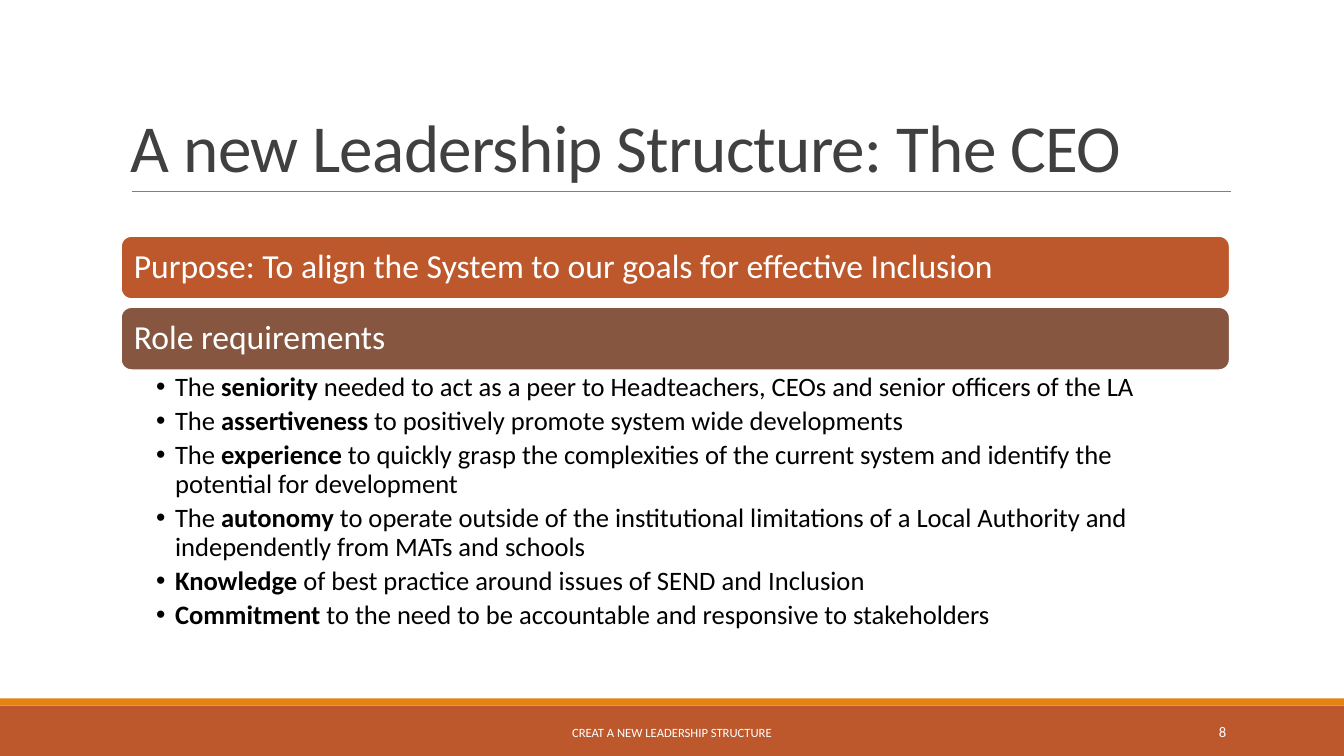
from lxml.etree import SubElement
from pptx import Presentation
from pptx.dml.color import RGBColor as RGB
from pptx.enum.shapes import MSO_CONNECTOR as LINE, MSO_SHAPE as SHAPE
from pptx.enum.text import MSO_ANCHOR as ANCHOR, PP_ALIGN as ALIGN
from pptx.oxml.ns import qn
from pptx.util import Pt

COLORS = {
    "rust": "BD582C", "orange": "E48312", "brown": "865640", "rule": "808080",
    "heading": "404040", "white": "FFFFFF", "black": "000000",
}
REQUIREMENTS = [
    "The* seniority *needed to act as a peer to Headteachers, CEOs and senior officers of the LA",
    "The *assertiveness* to positively promote system wide developments",
    "The *experience *to quickly grasp the complexities of the current system and identify the potential for development",
    "The *autonomy* to operate outside of the institutional limitations of a Local Authority and independently from MATs and schools",
    "*Knowledge* of best practice around issues of SEND and Inclusion",
    "*Commitment* to the need to be accountable and responsive to stakeholders",
]


class Deck:
    """Holds the style and the current slide, and draws each kind of element."""

    def __init__(self, width, height, font="Calibri"):
        self.show = Presentation()
        self.show.slide_width, self.show.slide_height = Pt(width), Pt(height)
        self.slide = self.show.slides.add_slide(self.show.slide_layouts[6])
        self.font = font

    def color(self, name):
        return RGB.from_string(COLORS[name])

    def apply(self, target, values):
        for name, value in values.items():
            setattr(target, name, value)

    def fill_text(self, frame, lines, size, color, anchor=ANCHOR.MIDDLE,
                  insets=(7.2, 3.6, 7.2, 3.6), tracking=0, bullet=None, **layout):
        sides = ("margin_left", "margin_top", "margin_right", "margin_bottom")
        self.apply(frame, {"word_wrap": True, "vertical_anchor": anchor,
                           **dict(zip(sides, map(Pt, insets)))})
        for index, line in enumerate(lines):
            paragraph = frame.paragraphs[0] if index == 0 else frame.add_paragraph()
            self.apply(paragraph, {"alignment": ALIGN.LEFT, **layout})
            if bullet:
                self.bullet(paragraph, bullet)
            for part, words in enumerate(line.split("*")):
                if words:
                    run = paragraph.add_run()
                    run.text = words
                    self.apply(run.font, {"name": self.font, "size": Pt(size), "bold": part % 2 == 1})
                    run.font.color.rgb = self.color(color)
                    if tracking:
                        run.font._element.set("spc", str(int(tracking * 100)))

    def bullet(self, paragraph, indent):
        props = paragraph._p.get_or_add_pPr()
        props.set("marL", str(Pt(indent)))
        props.set("indent", str(-Pt(indent)))
        SubElement(props, qn("a:buFont")).set("typeface", "Arial")
        SubElement(props, qn("a:buChar")).set("char", "•")

    def text(self, box, lines, size, color, **style):
        frame = self.slide.shapes.add_textbox(*map(Pt, box)).text_frame
        self.fill_text(frame, lines, size, color, **style)

    def block(self, box, fill, kind=SHAPE.RECTANGLE, outline=None):
        block = self.slide.shapes.add_shape(kind, *map(Pt, box))
        block.shadow.inherit = False
        block.fill.solid()
        block.fill.fore_color.rgb = self.color(fill)
        if outline:
            block.line.color.rgb = self.color(outline)
            block.line.width = Pt(1.25)
        else:
            block.line.fill.background()
        return block

    def banner(self, box, fill, words):
        banner = self.block(box, fill, SHAPE.ROUNDED_RECTANGLE, "white")
        self.fill_text(banner.text_frame, [words], 24, "white", insets=(7.2,) * 4, line_spacing=0.9)

    def rule(self, left, right, top, color, width):
        rule = self.slide.shapes.add_connector(LINE.STRAIGHT, *map(Pt, (left, top, right, top)))
        rule.line.color.rgb = self.color(color)
        rule.line.width = Pt(width)
        SubElement(rule._element.spPr, qn("a:effectLst"))


def main():
    deck = Deck(960, 540)
    left, width = 86.4, 792

    deck.block((0, 504, 960, 36), "rust")
    deck.block((0, 498.9, 960, 5.1), "orange")
    deck.rule(94, 879, 136.8, "rule", 0.5)
    deck.text((left, 22.5, width, 114.3), ["A new Leadership Structure: The CEO"], 48, "heading",
              anchor=ANCHOR.BOTTOM, tracking=-0.5, line_spacing=0.85)

    banners = [("rust", "Purpose: To align the System to our goals for effective Inclusion"),
               ("brown", "Role requirements")]
    for row, (fill, words) in enumerate(banners):
        deck.banner((left, 168.6 + row * 50.8, width, 45), fill, words)

    deck.text((left, 264.4, width, 196), REQUIREMENTS, 19, "black", anchor=ANCHOR.TOP,
              insets=(25.2, 2.4, 13.5, 2.4), bullet=13.5, line_spacing=0.9, space_after=Pt(3.8))

    deck.text((290, 508.5, 379.7, 28.8), ["CREAT A NEW LEADERSHIP STRUCTURE"], 9, "white",
              alignment=ALIGN.CENTER)
    deck.text((779.8, 508.5, 103.3, 28.8), ["8"], 10.5, "white", alignment=ALIGN.RIGHT)

    deck.show.save("out.pptx")


if __name__ == "__main__":
    main()
